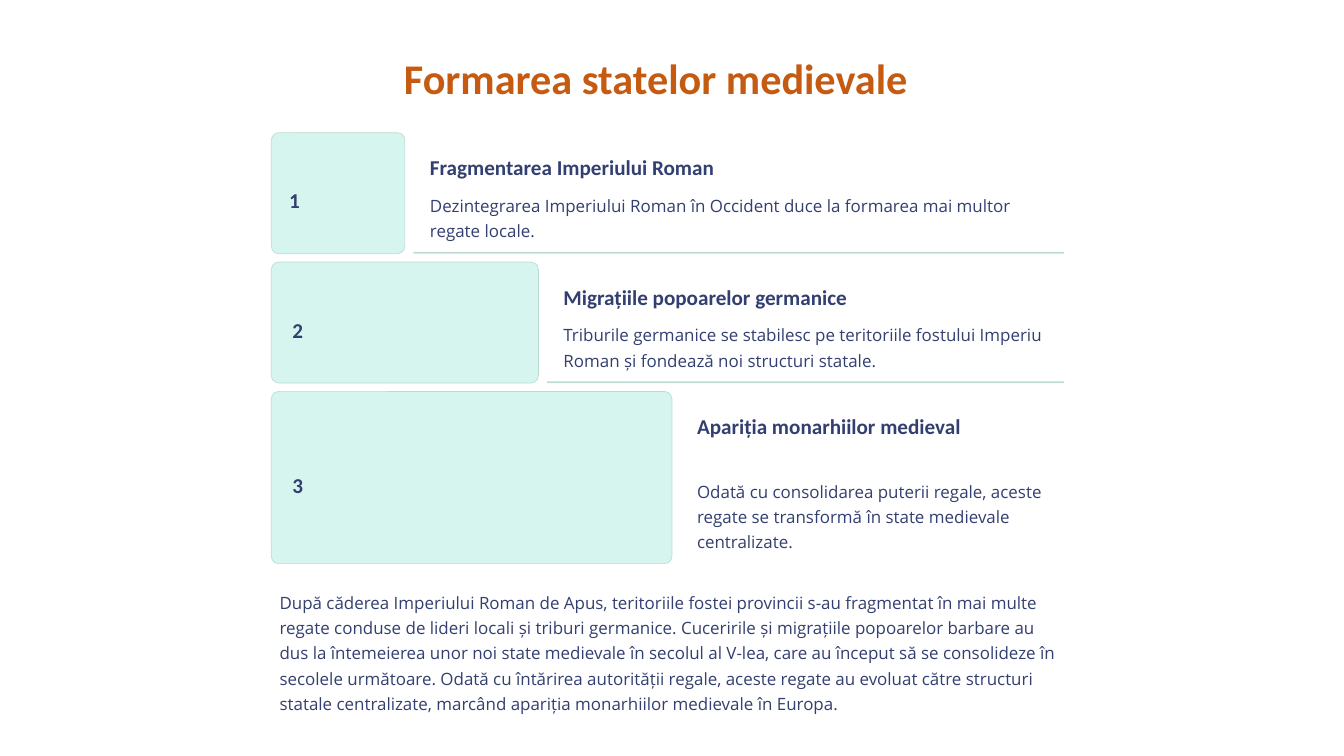
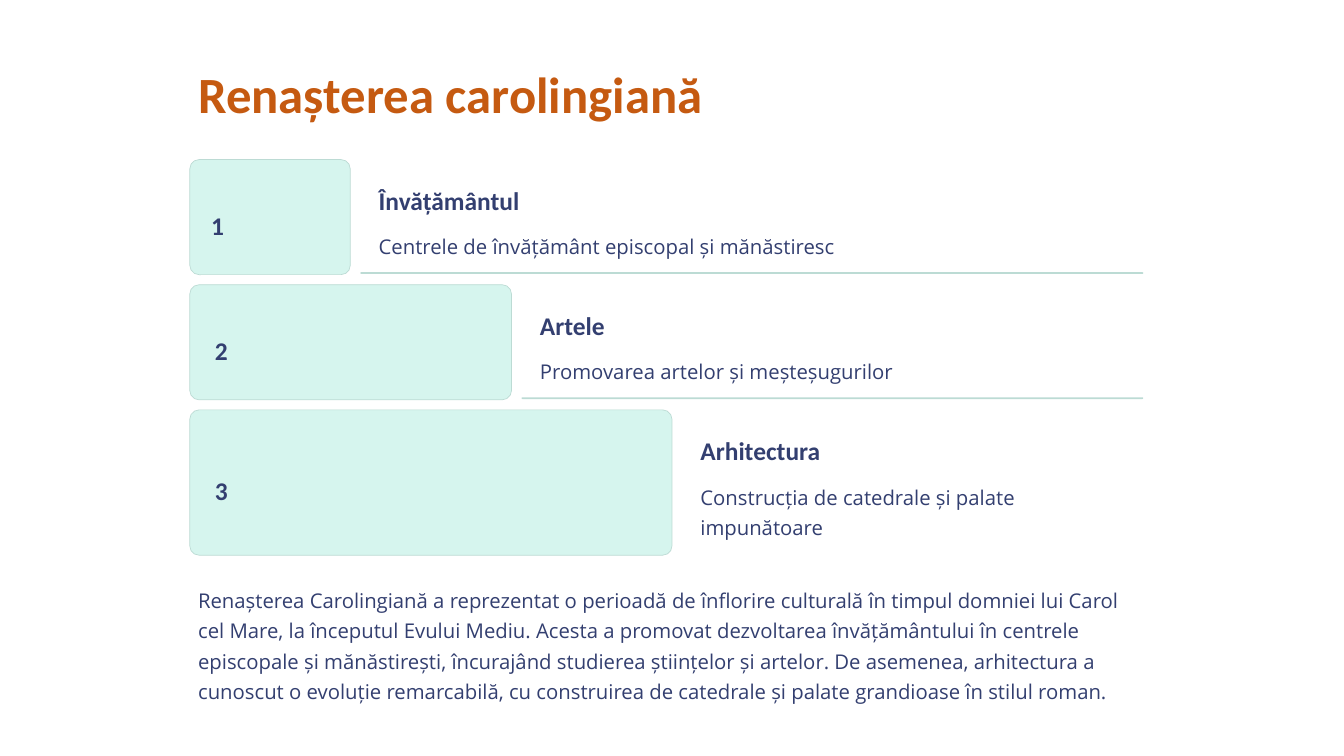
"""Builds two slides of numbered steps on early medieval Europe."""
from dataclasses import dataclass

from pptx import Presentation
from pptx.dml.color import RGBColor
from pptx.enum.shapes import MSO_SHAPE as Shape
from pptx.enum.text import MSO_ANCHOR as Anchor, MSO_AUTO_SIZE as AutoSize, PP_ALIGN as Align
from pptx.util import Emu, Pt

PX_PER_INCH = 100
EMU_PER_PX = 914400 // PX_PER_INCH
PAGE_WIDTH, PAGE_HEIGHT = 1600, 900

WHITE = RGBColor(0xFF, 0xFF, 0xFF)
MINT = RGBColor(0xD6, 0xF5, 0xEE)
SAGE = RGBColor(0xBC, 0xDB, 0xD4)
NAVY = RGBColor(0x33, 0x3F, 0x70)
ORANGE = RGBColor(0xC5, 0x5A, 0x11)


@dataclass
class TextStyle:
    """Font, size and line pitch of one kind of text."""
    font: str
    size: float
    pitch: float
    color: RGBColor = NAVY
    bold: bool = True
    align: Align = Align.LEFT

    def height(self, lines):
        """Return the height in px of a number of lines."""
        return round(lines * self.pitch / 72 * PX_PER_INCH)


@dataclass
class Theme:
    """Text styles and spacing of one slide."""
    title: TextStyle
    number: TextStyle
    heading: TextStyle
    body: TextStyle
    gap: int
    pad: int
    number_indent: int
    number_widths: tuple
    text_gap: int
    radius: int
    rule_rise: int


@dataclass
class Step:
    """One numbered step, with the height of its bar and the sizes of its texts."""
    heading: str
    text: str
    bar_height: int
    heading_width: int
    text_width: int
    text_lines: int
    heading_lines: int = 1


LARGE_PITCH_THEME = Theme(
    title=TextStyle("Calibri", 43.5, 54.4, ORANGE),
    number=TextStyle("Calibri", 21.8, 32.6, align=Align.CENTER),
    heading=TextStyle("Calibri", 21.8, 27.2),
    body=TextStyle("Open Sans", 17.4, 26.1, bold=False),
    gap=12, pad=24, number_indent=25, number_widths=(16, 25, 25),
    text_gap=15, radius=11, rule_rise=3)

SMALL_PITCH_THEME = Theme(
    title=TextStyle("Calibri", 36.2, 45.2, ORANGE, align=Align.CENTER),
    number=TextStyle("Calibri", 18.1, 27.1, align=Align.CENTER),
    heading=TextStyle("Calibri", 18.1, 22.6),
    body=TextStyle("Open Sans", 14.5, 21.7, bold=False),
    gap=10, pad=20, number_indent=21, number_widths=(13, 21, 21),
    text_gap=13, radius=9, rule_rise=2)

STATE_STEPS = [
    Step("Fragmentarea Imperiului Roman",
         "Dezintegrarea Imperiului Roman în Occident duce la formarea mai multor regate locale.",
         144, 508, 755, 2),
    Step("Migrațiile popoarelor germanice",
         "Triburile germanice se stabilesc pe teritoriile fostului Imperiu Roman și fondează "
         "noi structuri statale.",
         144, 507, 596, 2),
    Step("Apariția monarhiilor medieval",
         "Odată cu consolidarea puterii regale, aceste regate se transformă în state medievale "
         "centralizate.",
         205, 437, 437, 3, heading_lines=2),
]
STATE_SUMMARY = (
    "După căderea Imperiului Roman de Apus, teritoriile fostei provincii s-au fragmentat în mai "
    "multe regate conduse de lideri locali și triburi germanice. Cuceririle și migrațiile "
    "popoarelor barbare au dus la întemeierea unor noi state medievale în secolul al V-lea, care "
    "au început să se consolideze în secolele următoare. Odată cu întărirea autorității regale, "
    "aceste regate au evoluat către structuri statale centralizate, marcând apariția monarhiilor "
    "medievale în Europa.")

RENAISSANCE_STEPS = [
    Step("Învățământul", "Centrele de învățământ episcopal și mănăstiresc", 137, 302, 543, 1),
    Step("Artele", "Promovarea artelor și meșteșugurilor", 137, 302, 421, 1),
    Step("Arhitectura", "Construcția de catedrale și palate impunătoare", 173, 302, 526, 2),
]
RENAISSANCE_SUMMARY = (
    "Renașterea Carolingiană a reprezentat o perioadă de înflorire culturală în timpul domniei "
    "lui Carol cel Mare, la începutul Evului Mediu. Acesta a promovat dezvoltarea învățământului "
    "în centrele episcopale și mănăstirești, încurajând studierea științelor și artelor. De "
    "asemenea, arhitectura a cunoscut o evoluție remarcabilă, cu construirea de catedrale și "
    "palate grandioase în stilul roman.")


def px(length):
    """Turn px into EMU."""
    return Emu(round(length) * EMU_PER_PX)


def write(box, text, style, wrap):
    """Put one styled paragraph into a box."""
    frame = box.text_frame
    frame.text = text
    frame.word_wrap = wrap
    frame.auto_size = AutoSize.NONE
    frame.vertical_anchor = Anchor.TOP
    frame.margin_left = frame.margin_right = px(10)
    frame.margin_top = frame.margin_bottom = px(5)
    para = frame.paragraphs[0]
    para.alignment = style.align
    para.line_spacing = Pt(style.pitch)
    para.space_before = Pt(0)
    font = para.runs[0].font
    font.name, font.size, font.bold = style.font, Pt(style.size), style.bold
    font.color.rgb = style.color


def add_text(page, text, style, left, top, width, lines=1):
    """Add a text box that wraps when it holds several lines."""
    box = page.shapes.add_textbox(px(left), px(top), px(width), px(style.height(lines)))
    write(box, text, style, wrap=lines > 1)


def add_panel(page, left, top, width, height, radius, fill, line=None):
    """Add a rounded rectangle with an optional outline."""
    panel = page.shapes.add_shape(
        Shape.ROUNDED_RECTANGLE, px(left), px(top), px(width), px(height))
    panel.adjustments[0] = radius / min(width, height)
    panel.shadow.inherit = False
    panel.fill.solid()
    panel.fill.fore_color.rgb = fill
    if line is None:
        panel.line.fill.background()
    else:
        panel.line.color.rgb = line
        panel.line.width = Pt(0.6)


def add_title(page, text, style, left, top, width):
    """Place and format the title placeholder."""
    title = page.shapes.title
    title.left, title.top = px(left), px(top)
    title.width, title.height = px(width), px(style.height(1))
    write(title, text, style, wrap=True)


def add_step(page, theme, step, number, left, top, bar_width, right):
    """Add a bar with its number, and the heading and text beside it."""
    add_panel(page, left, top, bar_width, step.bar_height, theme.radius, MINT, SAGE)
    number_top = top + (step.bar_height - theme.number.height(1)) / 2
    add_text(page, str(number), theme.number, left + theme.number_indent, number_top,
             theme.number_widths[number - 1])
    text_left = left + bar_width + theme.pad
    heading_top = top + theme.pad
    add_text(page, step.heading, theme.heading, text_left, heading_top,
             step.heading_width, step.heading_lines)
    text_top = heading_top + theme.heading.height(step.heading_lines) + theme.text_gap
    add_text(page, step.text, theme.body, text_left, text_top, step.text_width, step.text_lines)
    if right is not None:
        rule_left = left + bar_width + theme.gap
        add_panel(page, rule_left, top + step.bar_height - theme.rule_rise,
                  right - rule_left, 2, 1, SAGE)


def add_staircase(page, theme, steps, left, top, last_bar_width, right):
    """Stack the steps, each bar wider by an equal amount."""
    for number, step in enumerate(steps, 1):
        bar_width = round(last_bar_width * number / len(steps))
        rule_right = right if number < len(steps) else None
        add_step(page, theme, step, number, left, top, bar_width, rule_right)
        top += step.bar_height + theme.gap


def add_page(deck):
    """Add a white title-only page."""
    page = deck.slides.add_slide(deck.slide_layouts[5])
    page.background.fill.solid()
    page.background.fill.fore_color.rgb = WHITE
    return page


def build_states(deck):
    """Build the slide on the medieval states."""
    page, theme, left = add_page(deck), SMALL_PITCH_THEME, 323
    add_title(page, "Formarea statelor medievale", theme.title, left, 55, 916)
    add_staircase(page, theme, STATE_STEPS, left, 158, 477, 1267)
    add_text(page, STATE_SUMMARY, theme.body, left, 694, 955, 5)


def build_renaissance(deck):
    """Build the slide on the Carolingian renaissance."""
    page, theme, left = add_page(deck), LARGE_PITCH_THEME, 226
    add_title(page, "Renașterea carolingiană", theme.title, left, 67, 945)
    add_staircase(page, theme, RENAISSANCE_STEPS, left, 190, 574, 1361)
    add_text(page, RENAISSANCE_SUMMARY, theme.body, left, 688, 1148, 4)


def main():
    """Build and save the deck."""
    deck = Presentation()
    deck.slide_width, deck.slide_height = px(PAGE_WIDTH), px(PAGE_HEIGHT)
    build_states(deck)
    build_renaissance(deck)
    deck.save("out.pptx")


if __name__ == "__main__":
    main()
